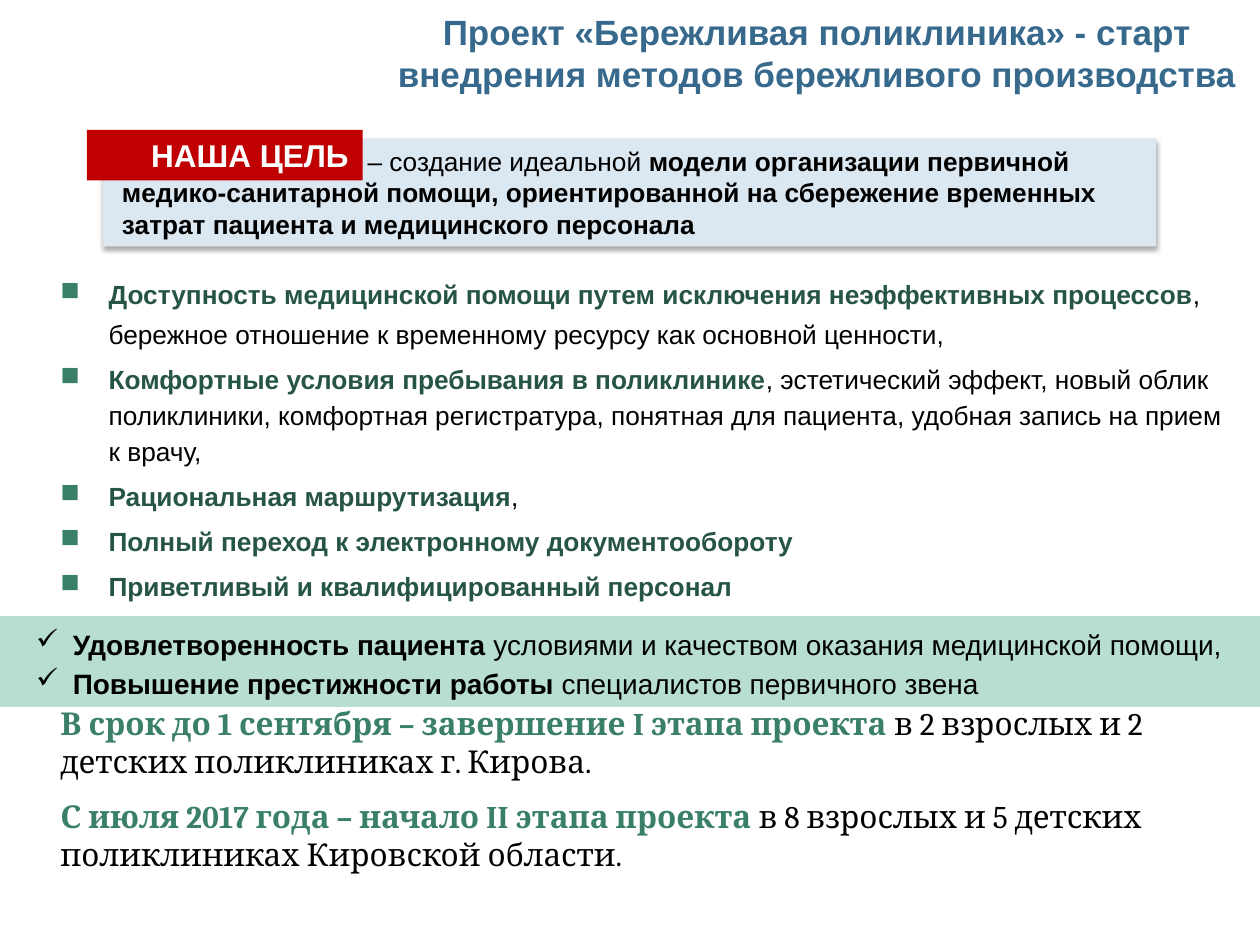
"""Build the slide on the goals and stages of the lean clinic project."""
import dataclasses
import typing

import lxml.etree
import pptx
import pptx.dml.color
import pptx.enum.shapes
import pptx.enum.text
import pptx.oxml.ns
import pptx.util

Cm = pptx.util.Cm
Pt = pptx.util.Pt
Color = pptx.dml.color.RGBColor.from_string
Align = pptx.enum.text.PP_ALIGN
Anchor = pptx.enum.text.MSO_ANCHOR
qn = pptx.oxml.ns.qn


@dataclasses.dataclass(frozen=True)
class Theme:
    """Colours, fonts and type sizes."""
    sans: str = "Arial"
    serif: str = "Cambria"
    black: str = "000000"
    white: str = "FFFFFF"
    blue: str = "36698C"
    pale: str = "DBE8F1"
    red: str = "C00000"
    green: str = "3A8067"
    dark: str = "275544"
    mint: str = "B7DED0"
    head: float = 20
    large: float = 18
    mid: float = 16
    body: float = 15


THEME = Theme()


class Style(typing.NamedTuple):
    """Look of a paragraph and of its bold lead."""
    size: float
    font: str = THEME.sans
    lead: str = THEME.black
    align: Align = Align.LEFT
    space: float = 0
    line: typing.Optional[float] = None
    left: float = 0
    first: float = 0
    mark: str = ""
    tint: str = THEME.black


class Item(typing.NamedTuple):
    """Text of a paragraph: plain start, bold lead, plain rest."""
    lead: str
    rest: str = ""
    start: str = ""


class Box(typing.NamedTuple):
    """Place, fill, insets and text of a block, lengths in centimetres."""
    place: tuple[float, float, float, float]
    style: Style
    items: tuple[Item, ...]
    fill: str = ""
    inset: tuple[float, float, float, float] = (0.25, 0.13, 0.25, 0.13)
    anchor: Anchor = Anchor.TOP
    shade: bool = False


TITLE = Style(THEME.head, lead=THEME.blue, align=Align.CENTER)
TERM = Style(THEME.large, THEME.serif, THEME.green, space=10)
GOAL = Style(THEME.body, left=0.25, first=4.95)
AIM = Style(THEME.body, lead=THEME.dark, space=5, line=1.15,
            left=0.97, first=-0.97, mark="■", tint=THEME.green)
LABEL = Style(THEME.large, lead=THEME.white)
GAIN = Style(THEME.mid, line=1.15, left=1.22, first=-0.74, mark="✓")

BOXES = (
    Box((7.54, 0.08, 17.86, 1.96), TITLE, (
        Item("Проект «Бережливая поликлиника» - старт внедрения методов бережливого производства"),)),
    Box((0.97, 14.07, 23.42, 3.68), TERM, (
        Item("В срок до 1 сентября – завершение I этапа проекта ",
             "в 2 взрослых и 2 детских поликлиниках г. Кирова."),
        Item("С июля 2017 года – начало II этапа проекта ",
             "в 8 взрослых и 5 детских поликлиниках Кировской области."))),
    Box((2.08, 2.79, 21.23, 2.18), GOAL, (
        Item("модели организации первичной медико-санитарной помощи, ориентированной "
             "на сбережение временных затрат пациента и медицинского персонала",
             start="– создание идеальной "),),
        THEME.pale, (0.13,) * 4, Anchor.MIDDLE, True),
    Box((0.97, 5.31, 24.1, 6.96), AIM, (
        Item("Доступность медицинской помощи путем исключения неэффективных процессов",
             ", бережное отношение к временному ресурсу как основной ценности,"),
        Item("Комфортные условия пребывания в поликлинике",
             ", эстетический эффект, новый облик поликлиники, комфортная регистратура, "
             "понятная для пациента, удобная запись на прием к врачу,"),
        Item("Рациональная маршрутизация", ","),
        Item("Полный переход к электронному документообороту"),
        Item("Приветливый и квалифицированный персонал"))),
    Box((1.75, 2.62, 5.56, 1.02), LABEL, (Item("НАША ЦЕЛЬ"),),
        THEME.red, (1.3, 0.13, 0.25, 0.13), Anchor.MIDDLE),
    Box((0, 12.42, 25.4, 1.83), GAIN, (
        Item("Удовлетворенность пациента ",
             "условиями и качеством оказания медицинской помощи,"),
        Item("Повышение престижности работы ",
             "специалистов первичного звена")), THEME.mint),
)


def add_node(root: typing.Any, tag: str, **attrs: typing.Any) -> typing.Any:
    """Append an XML element with its attributes."""
    return lxml.etree.SubElement(root, qn(tag), {key: str(val) for key, val in attrs.items()})


def add_shade(shape: typing.Any) -> None:
    """Give a shape a soft shadow below it."""
    list_ = shape._element.spPr.find(qn("a:effectLst"))
    outer = add_node(list_, "a:outerShdw", blurRad=Pt(3), dist=Pt(1.8),
                     dir=90 * 60000, rotWithShape=0)
    tone = add_node(outer, "a:srgbClr", val=THEME.black)
    add_node(tone, "a:alpha", val=35000)


def set_para(para: typing.Any, item: Item, style: Style, top: bool) -> None:
    """Write one item in the given style."""
    para.alignment = style.align
    para.space_before = Pt(0 if top else style.space)
    if style.line:
        para.line_spacing = style.line
    props = para._p.get_or_add_pPr()
    props.set("marL", str(Cm(style.left)))
    props.set("indent", str(Cm(style.first)))
    if style.mark:
        add_node(add_node(props, "a:buClr"), "a:srgbClr", val=style.tint)
        add_node(props, "a:buChar", char=style.mark)
    para.font.name = style.font
    para.font.size = Pt(style.size)
    parts = ((item.start, False), (item.lead, True), (item.rest, False))
    for text, bold in parts:
        if text:
            run = para.add_run()
            run.text = text
            run.font.bold = bold
            run.font.color.rgb = Color(style.lead if bold else THEME.black)


def add_box(slide: typing.Any, box: Box) -> None:
    """Draw one block with its text."""
    place = [Cm(val) for val in box.place]
    if box.fill:
        shape = slide.shapes.add_shape(pptx.enum.shapes.MSO_SHAPE.RECTANGLE, *place)
        shape.shadow.inherit = False
        shape.fill.solid()
        shape.fill.fore_color.rgb = Color(box.fill)
        shape.line.fill.background()
        if box.shade:
            add_shade(shape)
    else:
        shape = slide.shapes.add_textbox(*place)
    frame = shape.text_frame
    frame.word_wrap = True
    frame.vertical_anchor = box.anchor
    (frame.margin_left, frame.margin_top,
     frame.margin_right, frame.margin_bottom) = [Cm(val) for val in box.inset]
    for rank, item in enumerate(box.items):
        para = frame.add_paragraph() if rank else frame.paragraphs[0]
        style = box.style
        if style is AIM and rank == 0:
            style = style._replace(line=Pt(22.8))
        set_para(para, item, style, rank == 0)


def main() -> None:
    """Build and save the slide."""
    deck = pptx.Presentation()
    deck.slide_width, deck.slide_height = Cm(25.4), Cm(19.05)
    slide = deck.slides.add_slide(deck.slide_layouts[6])
    for box in BOXES:
        add_box(slide, box)
    deck.save("out.pptx")


if __name__ == "__main__":
    main()
